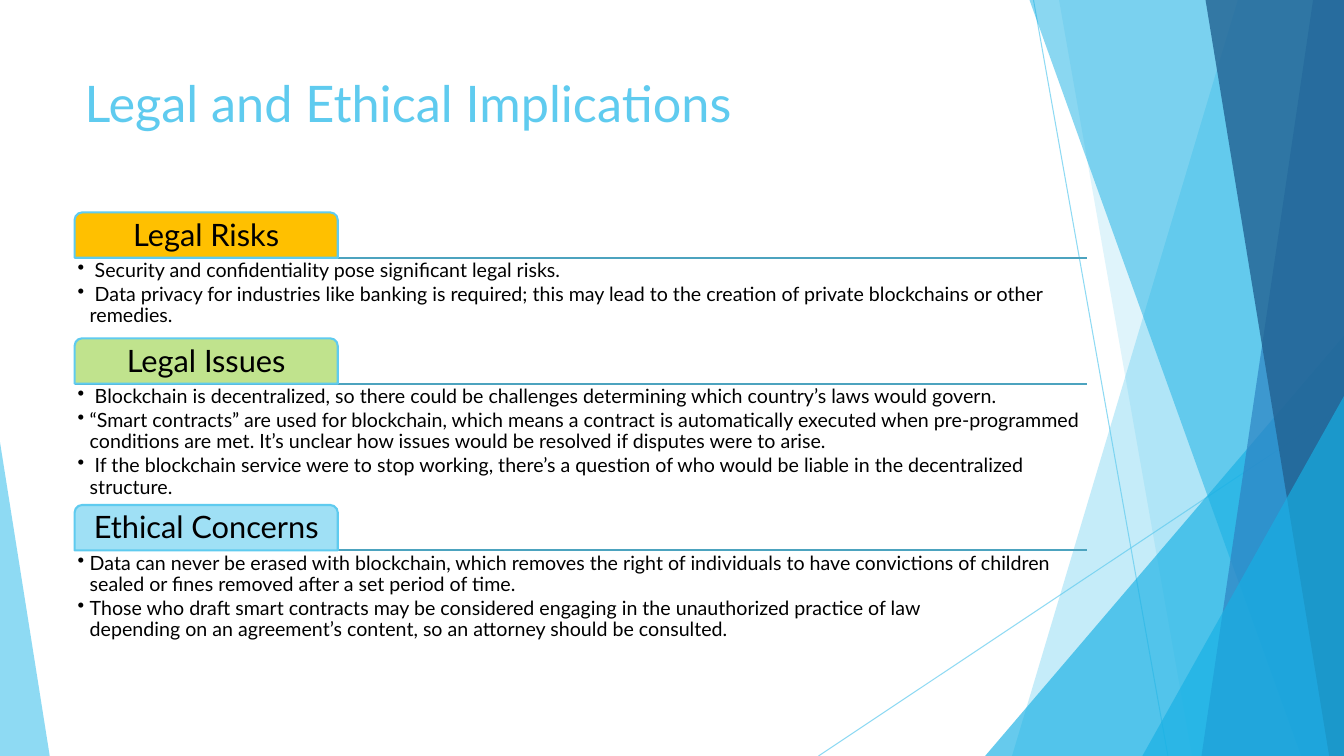
import dataclasses
import typing

import pptx
import pptx.dml.color
import pptx.enum.shapes
import pptx.enum.text
import pptx.oxml
import pptx.oxml.ns
import pptx.util

RGBColor = pptx.dml.color.RGBColor
SKY = RGBColor(0x5F, 0xCB, 0xEF)
CYAN = RGBColor(0x17, 0xB0, 0xE4)
BLUE = RGBColor(0x2E, 0x83, 0xC3)
NAVY = RGBColor(0x22, 0x62, 0x92)
TEAL = RGBColor(0x4C, 0xA3, 0xBF)
AMBER = RGBColor(0xFF, 0xC0, 0x00)
GREEN = RGBColor(0xC0, 0xE3, 0x8D)
PALE_BLUE = RGBColor(0x9F, 0xE0, 0xF5)
BLACK = RGBColor(0x00, 0x00, 0x00)

FONT = "Lato"
SLIDE_WIDTH = pptx.util.Inches(13.333)
SLIDE_HEIGHT = pptx.util.Inches(7.5)

# Positions and sizes are percentages of the slide's width or height.
LEFT = 5.55
BODY_WIDTH = 75.3
TAB_WIDTH, TAB_HEIGHT = 19.58, 6
FIRST_TAB_TOP = 28.1
SECTION_GAP = 0.35


@dataclasses.dataclass
class Ray:
    start: tuple[float, float]
    end: tuple[float, float]


@dataclasses.dataclass
class Band:
    """A full-height shape running from a slanted left edge to the slide's right edge."""
    top_x: float
    bottom_x: float
    color: RGBColor
    opacity: int


@dataclasses.dataclass
class Corner:
    """A right triangle standing on the slide's bottom edge."""
    left: float
    top: float
    width: float
    apex: float
    color: RGBColor
    opacity: int


@dataclasses.dataclass
class Section:
    heading: str
    color: RGBColor
    body_height: float
    points: list[str]


RAYS = [Ray((76.9, 0), (86.9, 100)), Ray((100, 53.7), (60.9, 100))]
FACETS = [
    Band(92.1, 75.3, SKY, 36),
    Band(78.8, 88.7, SKY, 20),
    Corner(73.3, 44.4, 26.7, 1, CYAN, 66),
    Band(76.6, 96.8, CYAN, 50),
    Band(97.7, 89.4, BLUE, 70),
    Band(89.7, 98.9, NAVY, 80),
    Corner(85, 52.4, 15, 1, CYAN, 66),
    Corner(0, 58.5, 3.7, 0, SKY, 70),
]
SECTIONS = [
    Section("Legal Risks", AMBER, 10.3, [
        " Security and confidentiality pose significant legal risks.",
        " Data privacy for industries like banking is required; this may lead to the "
        "creation of private blockchains or other remedies.",
    ]),
    Section("Legal Issues", GREEN, 15.7, [
        " Blockchain is decentralized, so there could be challenges determining which "
        "country’s laws would govern.",
        "“Smart contracts” are used for blockchain, which means a contract is automatically "
        "executed when pre-programmed conditions are met. It’s unclear how issues would be "
        "resolved if disputes were to arise.",
        " If the blockchain service were to stop working, there’s a question of who would be "
        "liable in the decentralized structure.",
    ]),
    Section("Ethical Concerns", PALE_BLUE, 12, [
        "Data can never be erased with blockchain, which removes the right of individuals to "
        "have convictions of children sealed or fines removed after a set period of time.",
        "Those who draft smart contracts may be considered engaging in the unauthorized "
        "practice of law\ndepending on an agreement’s content, so an attorney should be "
        "consulted.",
    ]),
]


def across(percent: float) -> int:
    return round(SLIDE_WIDTH * percent / 100)


def down(percent: float) -> int:
    return round(SLIDE_HEIGHT * percent / 100)


def box(left: float, top: float, width: float, height: float) -> tuple[int, int, int, int]:
    return across(left), down(top), across(width), down(height)


def set_opacity(shape: typing.Any, percent: int) -> None:
    for color in shape.element.spPr.iter(pptx.oxml.ns.qn("a:srgbClr")):
        pptx.oxml.ns.qn("a:alpha")
        color.append(pptx.oxml.parse_xml(
            f'<a:alpha {pptx.oxml.ns.nsdecls("a")} val="{percent * 1000}"/>'))


def add_line(slide: typing.Any, ray: Ray, color: RGBColor, points: float) -> typing.Any:
    line = slide.shapes.add_connector(
        pptx.enum.shapes.MSO_CONNECTOR.STRAIGHT,
        across(ray.start[0]), down(ray.start[1]), across(ray.end[0]), down(ray.end[1]))
    line.line.color.rgb = color
    line.line.width = pptx.util.Pt(points)
    line.element.spPr.append(pptx.oxml.parse_xml(
        f'<a:effectLst {pptx.oxml.ns.nsdecls("a")}/>'))
    return line


def add_facet(slide: typing.Any, facet: Band | Corner) -> None:
    if isinstance(facet, Band):
        builder = slide.shapes.build_freeform(across(facet.top_x), 0)
        builder.add_line_segments([
            (SLIDE_WIDTH, 0), (SLIDE_WIDTH, SLIDE_HEIGHT),
            (across(facet.bottom_x), SLIDE_HEIGHT)])
        shape = builder.convert_to_shape()
    else:
        shape = slide.shapes.add_shape(
            pptx.enum.shapes.MSO_SHAPE.ISOSCELES_TRIANGLE,
            *box(facet.left, facet.top, facet.width, 100 - facet.top))
        shape.adjustments[0] = facet.apex
    shape.shadow.inherit = False
    shape.line.fill.background()
    shape.fill.solid()
    shape.fill.fore_color.rgb = facet.color
    set_opacity(shape, facet.opacity)


def set_insets(text_frame: typing.Any, inches: float) -> None:
    text_frame.word_wrap = True
    text_frame.margin_left = text_frame.margin_right = pptx.util.Inches(inches)
    text_frame.margin_top = text_frame.margin_bottom = pptx.util.Inches(inches)


def format_runs(paragraph: typing.Any, points: float, color: RGBColor) -> None:
    for run in paragraph.runs:
        run.font.name = FONT
        run.font.size = pptx.util.Pt(points)
        run.font.color.rgb = color


def add_bullet(paragraph: typing.Any) -> None:
    properties = paragraph._p.get_or_add_pPr()
    properties.set("marL", str(pptx.util.Inches(0.12)))
    properties.set("indent", str(pptx.util.Inches(-0.12)))
    properties.append(pptx.oxml.parse_xml(
        f'<a:buChar {pptx.oxml.ns.nsdecls("a")} char="•"/>'))


def add_title(slide: typing.Any, text: str) -> None:
    title = slide.shapes.add_textbox(*box(LEFT, 8.9, 70.5, 19.2))
    title.text_frame.word_wrap = True
    title.text_frame.text = text
    format_runs(title.text_frame.paragraphs[0], 36, SKY)


def add_tab(slide: typing.Any, section: Section, top: float) -> None:
    tab = slide.shapes.add_shape(
        pptx.enum.shapes.MSO_SHAPE.ROUND_2_SAME_RECTANGLE,
        *box(LEFT, top, TAB_WIDTH, TAB_HEIGHT))
    tab.shadow.inherit = False
    tab.fill.solid()
    tab.fill.fore_color.rgb = section.color
    tab.line.color.rgb = SKY
    tab.line.width = pptx.util.Pt(1.5)
    set_insets(tab.text_frame, 0.05)
    tab.text_frame.vertical_anchor = pptx.enum.text.MSO_ANCHOR.MIDDLE
    tab.text_frame.text = section.heading
    paragraph = tab.text_frame.paragraphs[0]
    paragraph.alignment = pptx.enum.text.PP_ALIGN.CENTER
    paragraph.line_spacing = 0.9
    format_runs(paragraph, 22, BLACK)


def add_body(slide: typing.Any, section: Section, top: float) -> None:
    body = slide.shapes.add_textbox(*box(LEFT, top, BODY_WIDTH, section.body_height))
    set_insets(body.text_frame, 0.03)
    for index, point in enumerate(section.points):
        paragraph = body.text_frame.add_paragraph() if index else body.text_frame.paragraphs[0]
        paragraph.text = point
        paragraph.line_spacing = 0.9
        paragraph.space_after = pptx.util.Pt(2)
        add_bullet(paragraph)
        format_runs(paragraph, 14, BLACK)


def main() -> None:
    presentation = pptx.Presentation()
    presentation.slide_width, presentation.slide_height = SLIDE_WIDTH, SLIDE_HEIGHT
    slide = presentation.slides.add_slide(presentation.slide_layouts[6])
    for ray in RAYS:
        set_opacity(add_line(slide, ray, SKY, 0.75), 70)
    for facet in FACETS:
        add_facet(slide, facet)
    add_title(slide, "Legal and Ethical Implications")
    top = FIRST_TAB_TOP
    for section in SECTIONS:
        rule_y = top + TAB_HEIGHT
        add_line(slide, Ray((LEFT, rule_y), (LEFT + BODY_WIDTH, rule_y)), TEAL, 1.5)
        add_tab(slide, section, top)
        add_body(slide, section, rule_y)
        top = rule_y + section.body_height + SECTION_GAP
    presentation.save("out.pptx")


if __name__ == "__main__":
    main()
